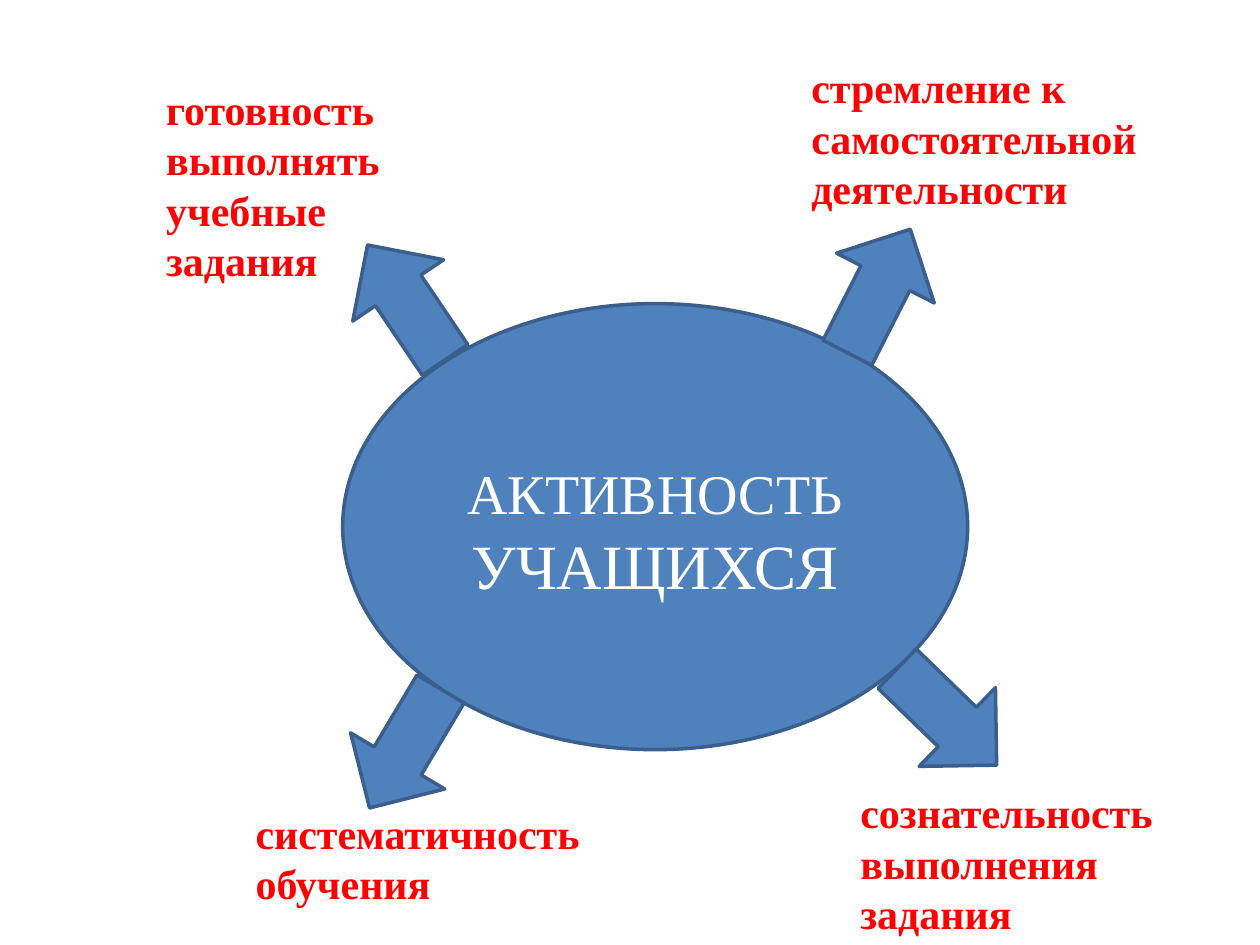
from pptx import Presentation
from pptx import util as u
from pptx.dml.color import RGBColor
from pptx.enum import shapes, text


def tint(code):
    return RGBColor.from_string(code)


class Board:
    face = "Times New Roman"
    blue, edge, red, white = "4F81BD", "3A5F8C", "FF0000", "FFFFFF"

    def __init__(self, slide):
        self.slide = slide

    def shape(self, kind, *box):
        item = self.slide.shapes.add_shape(kind, *map(u.Inches, box))
        item.shadow.inherit = False
        item.fill.solid()
        item.fill.fore_color.rgb = tint(self.blue)
        item.line.color.rgb = tint(self.edge)
        item.line.width = u.Pt(2)
        return item

    def hub(self, parts, *box):
        frame = self.shape(shapes.MSO_SHAPE.OVAL, *box).text_frame
        frame.word_wrap = True
        frame.vertical_anchor = text.MSO_ANCHOR.MIDDLE
        para = frame.paragraphs[0]
        para.alignment = text.PP_ALIGN.CENTER
        para.font.name = self.face
        for words, size in parts:
            run = para.add_run()
            run.text = words
            run.font.name = self.face
            run.font.size = u.Pt(size)
            run.font.color.rgb = tint(self.white)

    def arrow(self, left, top, angle):
        item = self.shape(shapes.MSO_SHAPE.UP_ARROW, left, top, 0.87, 1.1)
        item.rotation = angle

    def label(self, words, anchor, *box):
        frame = self.slide.shapes.add_textbox(*map(u.Inches, box)).text_frame
        frame.word_wrap = True
        frame.auto_size = text.MSO_AUTO_SIZE.SHAPE_TO_FIT_TEXT
        frame.vertical_anchor = anchor
        para = frame.paragraphs[0]
        para.text = words
        para.font.name = self.face
        para.font.size = u.Pt(24)
        para.font.bold = True
        para.font.color.rgb = tint(self.red)


def main():
    deck = Presentation()
    deck.slide_width, deck.slide_height = u.Inches(10), u.Inches(7.5)
    board = Board(deck.slides.add_slide(deck.slide_layouts[6]))

    board.hub([("АКТИВНОСТЬ", 32), (" УЧАЩИХСЯ", 36)], 2.72, 2.41, 4.96, 3.54)

    for left, top, angle in [
        (6.54, 1.76, 27),
        (2.79, 1.85, 326),
        (2.78, 5.39, 210.8),
        (7.08, 5.14, 134.1),
    ]:
        board.arrow(left, top, angle)

    high, mid = text.MSO_ANCHOR.TOP, text.MSO_ANCHOR.MIDDLE
    for words, anchor, *box in [
        ("готовность выполнять учебные задания", mid, 1.22, 0.6, 2.68, 1.72),
        ("стремление к самостоятельной деятельности", high, 6.34, 0.44, 3.29, 1.31),
        ("систематичность обучения", mid, 1.93, 6.35, 3.07, 0.91),
        ("сознательность выполнения задания", mid, 6.73, 6.19, 3.27, 1.31),
    ]:
        board.label(words, anchor, *box)

    deck.save("out.pptx")


if __name__ == "__main__":
    main()
